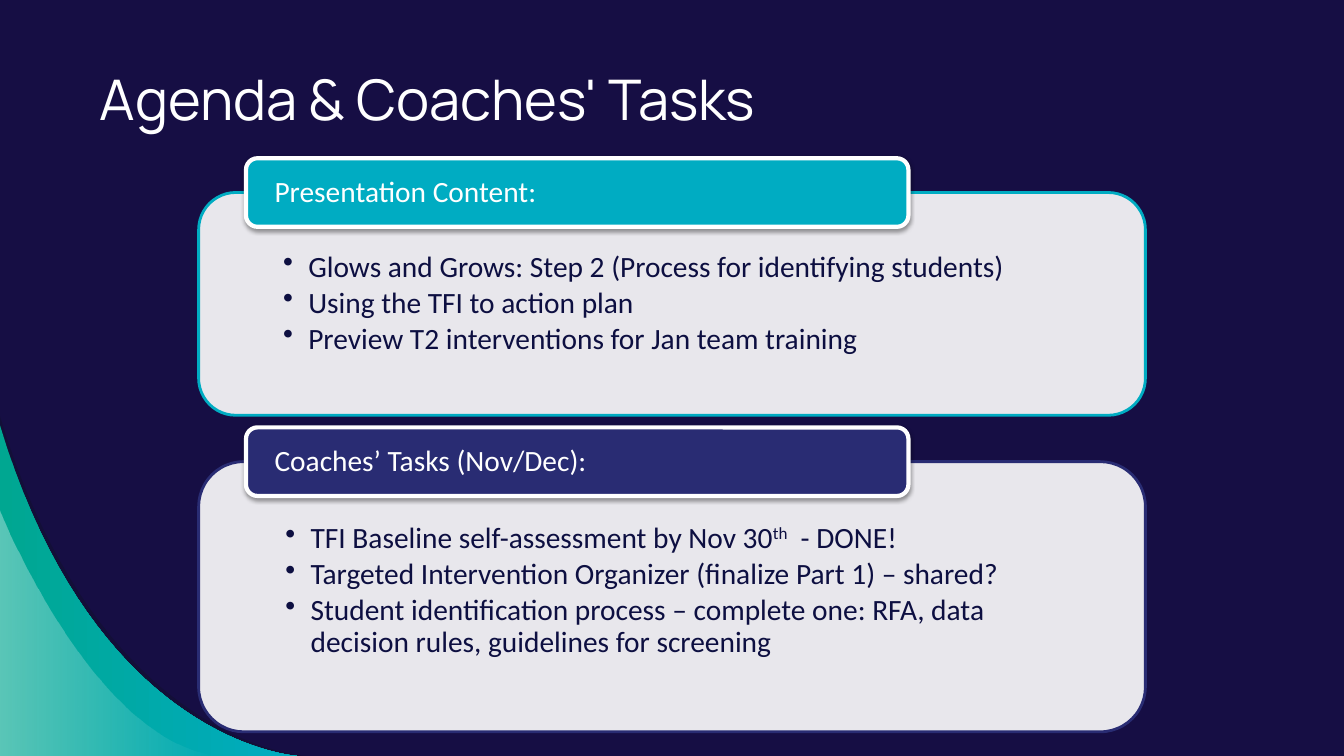
from dataclasses import dataclass

from pptx import Presentation
from pptx import util as u
from pptx.dml.color import RGBColor
from pptx.enum import shapes, text
from pptx.oxml import parse_xml
from pptx.oxml.ns import nsdecls, qn


@dataclass(frozen=True)
class Theme:
    """Colours, fonts and type sizes of the slide."""
    night: str = "160E44"
    shade: str = "12102F"
    teal: str = "00ACC2"
    green: str = "00A791"
    navy: str = "292C73"
    ink: str = "0D0F41"
    white: str = "FFFFFF"
    head: str = "Manrope"
    body: str = "Calibri"
    big: int = 40
    small: int = 21


def put(item, vals):
    """Set each named value on an item."""
    for key, val in vals.items():
        setattr(item, key, val)


def fade(node, pct):
    """Give every colour below a node an opacity in percent."""
    for tint in node.iter(qn("a:srgbClr")):
        tint.append(parse_xml(f'<a:alpha {nsdecls("a")} val="{pct * 1000}"/>'))


def bezier(a, b, c, d, steps=40):
    """Sample a cubic curve as points in EMU."""
    for i in range(steps + 1):
        t = i / steps
        s = 1 - t
        mix = (s ** 3, 3 * s * s * t, 3 * s * t * t, t ** 3)
        yield tuple(u.Inches(sum(m * p[k] for m, p in zip(mix, (a, b, c, d))))
                    for k in (0, 1))


class Deck:
    """Draw the parts of the agenda slide in one style."""

    def __init__(self, look):
        """Open a title-only slide on a dark ground."""
        self.look = look
        self.pres = Presentation()
        put(self.pres, {"slide_width": u.Inches(13.33), "slide_height": u.Inches(7.5)})
        self.slide = self.pres.slides.add_slide(self.pres.slide_layouts[5])
        self.paint(self.slide.background.fill, look.night)

    def paint(self, fill, tint):
        """Fill with one solid colour."""
        fill.solid()
        fill.fore_color.rgb = RGBColor.from_string(tint)

    def frame(self, shape, pads, anchor):
        """Set insets, wrapping and anchor of a text frame."""
        left, top, right, base = map(u.Inches, pads)
        put(shape.text_frame, {
            "margin_left": left, "margin_top": top, "margin_right": right,
            "margin_bottom": base, "word_wrap": True, "vertical_anchor": anchor,
            "auto_size": text.MSO_AUTO_SIZE.NONE})
        return shape.text_frame

    def say(self, para, words, face, size, tint):
        """Add one formatted run to a left-aligned paragraph."""
        para.alignment = text.PP_ALIGN.LEFT
        run = para.add_run()
        run.text = words
        put(run.font, {"name": face, "size": u.Pt(size)})
        run.font.color.rgb = RGBColor.from_string(tint)
        return run

    def title(self, words):
        """Place and format the slide title."""
        look, shape = self.look, self.slide.shapes.title
        put(shape, {"left": u.Inches(0.89), "top": u.Inches(0.51),
                    "width": u.Inches(10.26), "height": u.Inches(0.92)})
        area = self.frame(shape, [0.1] * 4, text.MSO_ANCHOR.MIDDLE)
        self.say(area.paragraphs[0], words, look.head, look.big, look.white)

    def wave(self, curve, stops):
        """Draw a corner wedge below a curve, filled from left to right."""
        pts = list(bezier(*curve))
        build = self.slide.shapes.build_freeform(*pts[0], scale=1.0)
        build.add_line_segments(pts[1:] + [(0, u.Inches(7.5))], close=True)
        shape = build.convert_to_shape()
        shape.shadow.inherit = False
        shape.line.fill.background()
        shape.fill.gradient()
        shape.fill.gradient_angle = 0
        nodes = shape._element.spPr.iter(qn("a:gs"))
        for stop, node, (tint, pct) in zip(shape.fill.gradient_stops, nodes, stops):
            stop.color.rgb = RGBColor.from_string(tint)
            fade(node, pct)

    def box(self, place, fill, edge, width):
        """Draw a rounded box."""
        shape = self.slide.shapes.add_shape(
            shapes.MSO_SHAPE.ROUNDED_RECTANGLE, *map(u.Inches, place))
        shape.shadow.inherit = False
        self.paint(shape.fill, fill)
        self.paint(shape.line.fill, edge)
        shape.line.width = u.Pt(width)
        return shape

    def panel(self, top, height, edge, items):
        """Draw a pale panel with a bulleted list."""
        look = self.look
        shape = self.box((1.97, top, 9.39, height), look.white, edge, 2)
        fade(shape._element.spPr.find(qn("a:solidFill")), 90)
        area = self.frame(shape, (0.73, 0.48, 0.73, 0.16), text.MSO_ANCHOR.TOP)
        for i, parts in enumerate(items):
            para = area.add_paragraph() if i else area.paragraphs[0]
            put(para, {"level": 1, "line_spacing": 0.9, "space_after": u.Pt(3)})
            props = para._p.get_or_add_pPr()
            props.set("marL", str(u.Inches(0.25)))
            props.set("indent", str(-u.Inches(0.25)))
            props.append(parse_xml(f'<a:buChar {nsdecls("a")} char="•"/>'))
            for j, words in enumerate(parts):
                run = self.say(para, words, look.body, look.small, look.ink)
                if j == 1:
                    run.font._element.set("baseline", "30000")

    def tab(self, top, fill, words):
        """Draw a shadowed heading tab."""
        look = self.look
        shape = self.box((2.44, top, 6.57, 0.68), fill, look.white, 3)
        glow = shape._element.spPr.find(qn("a:effectLst"))
        glow.append(parse_xml(
            f'<a:outerShdw {nsdecls("a")} blurRad="{u.Pt(3.1)}" dist="{u.Pt(1.6)}" '
            'dir="5400000" rotWithShape="0"><a:srgbClr val="000000">'
            '<a:alpha val="38000"/></a:srgbClr></a:outerShdw>'))
        area = self.frame(shape, (0.25, 0, 0.25, 0), text.MSO_ANCHOR.MIDDLE)
        area.paragraphs[0].line_spacing = 0.9
        self.say(area.paragraphs[0], words, look.body, look.small, look.white)


def main():
    """Build and save the slide."""
    look = Theme()
    deck = Deck(look)
    deck.title("Agenda & Coaches' Tasks")
    waves = [
        (((0, 4.13), (0.98, 7.39), (3.03, 7.5), (3.03, 7.5)),
         [(look.shade, 54), (look.shade, 54)]),
        (((0, 4.22), (0.95, 7.39), (2.95, 7.5), (2.95, 7.5)),
         [(look.green, 100), (look.teal, 100)]),
        (((0, 5.06), (0, 5.06), (0.91, 7.35), (2.16, 7.5)),
         [(look.white, 36), (look.white, 0)])]
    for curve, stops in waves:
        deck.wave(curve, stops)
    cards = [
        (1.57, 2.21, look.teal, "Presentation Content:", [
            ["Glows and Grows: Step 2 (Process for identifying students)"],
            ["Using the TFI to action plan"],
            ["Preview T2 interventions for Jan team training"]]),
        (4.24, 2.68, look.navy, "Coaches’ Tasks (Nov/Dec):", [
            ["TFI Baseline self-assessment by Nov 30", "th", "  - DONE!"],
            ["Targeted Intervention Organizer (finalize Part 1) – shared?"],
            ["Student identification process – complete one: RFA, data "
             "decision rules, guidelines for screening"]])]
    for top, height, tint, head, items in cards:
        deck.panel(top + 0.34, height, tint, items)
        deck.tab(top, tint, head)
    deck.pres.save("out.pptx")


if __name__ == "__main__":
    main()
